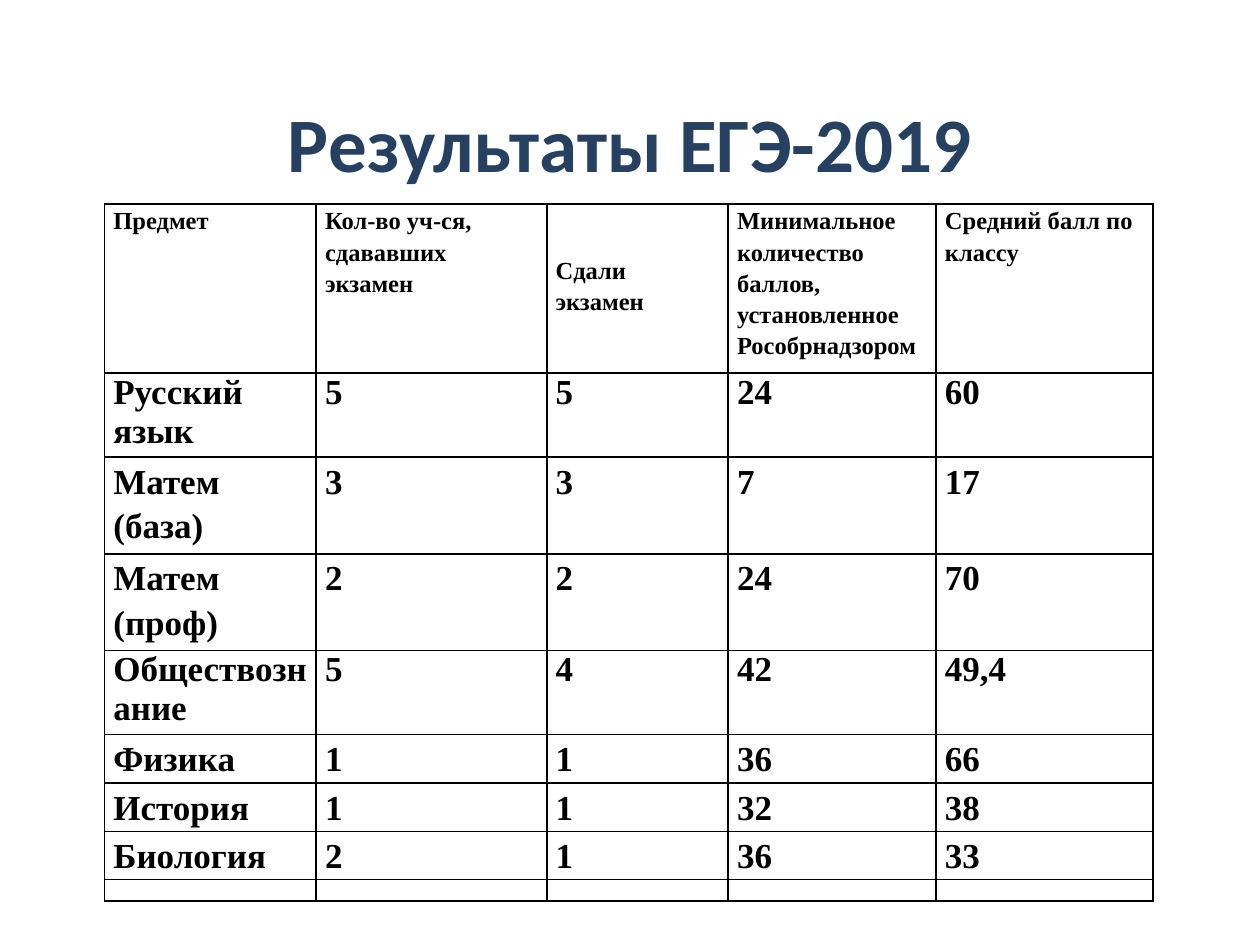
from lxml import etree
from pptx import Presentation
from pptx import util as u
from pptx.dml.color import RGBColor
from pptx.enum import text
from pptx.oxml import ns

NAVY = RGBColor(0x25, 0x40, 0x61)
BLACK = RGBColor(0, 0, 0)
TABLE_FONT = "Times New Roman"
COL_WIDTHS = [1.68, 1.83, 1.44, 1.65, 1.72]
ROW_HEIGHTS = [1.34, 0.62, 0.71, 0.7, 0.62, 0.36, 0.35, 0.35, 0.17]
SINGLE_SPACED_ROWS = (1, 4)
RESULTS = [
    ["Предмет", "Кол-во уч-ся,\nсдававших экзамен", "Сдали экзамен",
     "Минимальное количество баллов, установленное Рособрнадзором",
     "Средний балл по классу"],
    ["Русский язык", "5", "5", "24", "60"],
    ["Матем (база)", "3", "3", "7", "17"],
    ["Матем (проф)", "2", "2", "24", "70"],
    ["Обществознание", "5", "4", "42", "49,4"],
    ["Физика", "1", "1", "36", "66"],
    ["История", "1", "1", "32", "38"],
    ["Биология", "2", "1", "36", "33"],
    [""] * 5,
]


def style_runs(p, font, size, color):
    for r in p.runs:
        r.font.name = font
        r.font.size = u.Pt(size)
        r.font.bold = True
        r.font.color.rgb = color


def add_title(s, title):
    sp = s.shapes.add_textbox(u.Inches(0.5), u.Inches(0.7), u.Inches(9), u.Inches(0.85))
    tf = sp.text_frame
    tf.word_wrap = True
    tf.vertical_anchor = text.MSO_ANCHOR.MIDDLE
    tf.text = title
    p = tf.paragraphs[0]
    p.alignment = text.PP_ALIGN.CENTER
    style_runs(p, "Calibri", 44, NAVY)


def add_borders(cell):
    tc_pr = cell._tc.get_or_add_tcPr()
    for side in ("a:lnL", "a:lnR", "a:lnT", "a:lnB"):
        ln = etree.SubElement(tc_pr, ns.qn(side), w=str(u.Pt(1)))
        fill = etree.SubElement(ln, ns.qn("a:solidFill"))
        etree.SubElement(fill, ns.qn("a:srgbClr"), val=str(BLACK))


def fill_cell(cell, value, size, spacing):
    add_borders(cell)
    cell.fill.background()
    cell.margin_left = cell.margin_right = u.Inches(0.07)
    cell.margin_top = cell.margin_bottom = 0
    cell.text_frame.text = value
    for p in cell.text_frame.paragraphs:
        p.line_spacing = spacing
        style_runs(p, TABLE_FONT, size, BLACK)
        if not value:
            etree.SubElement(p._p, ns.qn("a:endParaRPr"), sz="1000")


def add_results_table(s):
    frame = s.shapes.add_table(
        len(ROW_HEIGHTS), len(COL_WIDTHS), u.Inches(0.83), u.Inches(1.62),
        u.Inches(sum(COL_WIDTHS)), u.Inches(sum(ROW_HEIGHTS)))
    table = frame.table
    table.first_row = table.horz_banding = False
    for column, width in zip(table.columns, COL_WIDTHS):
        column.width = u.Inches(width)
    for i, values in enumerate(RESULTS):
        table.rows[i].height = u.Inches(ROW_HEIGHTS[i])
        size = 14 if i == 0 else 20
        spacing = 1.0 if i in SINGLE_SPACED_ROWS or not any(values) else 1.15
        for j, value in enumerate(values):
            fill_cell(table.cell(i, j), value, size, spacing)
    table.cell(0, 2).margin_top = u.Inches(0.39)


def main():
    prs = Presentation()
    prs.slide_width = u.Inches(10)
    prs.slide_height = u.Inches(7.5)
    s = prs.slides.add_slide(prs.slide_layouts[6])
    add_title(s, "Результаты ЕГЭ-2019")
    add_results_table(s)
    prs.save("out.pptx")


if __name__ == "__main__":
    main()
